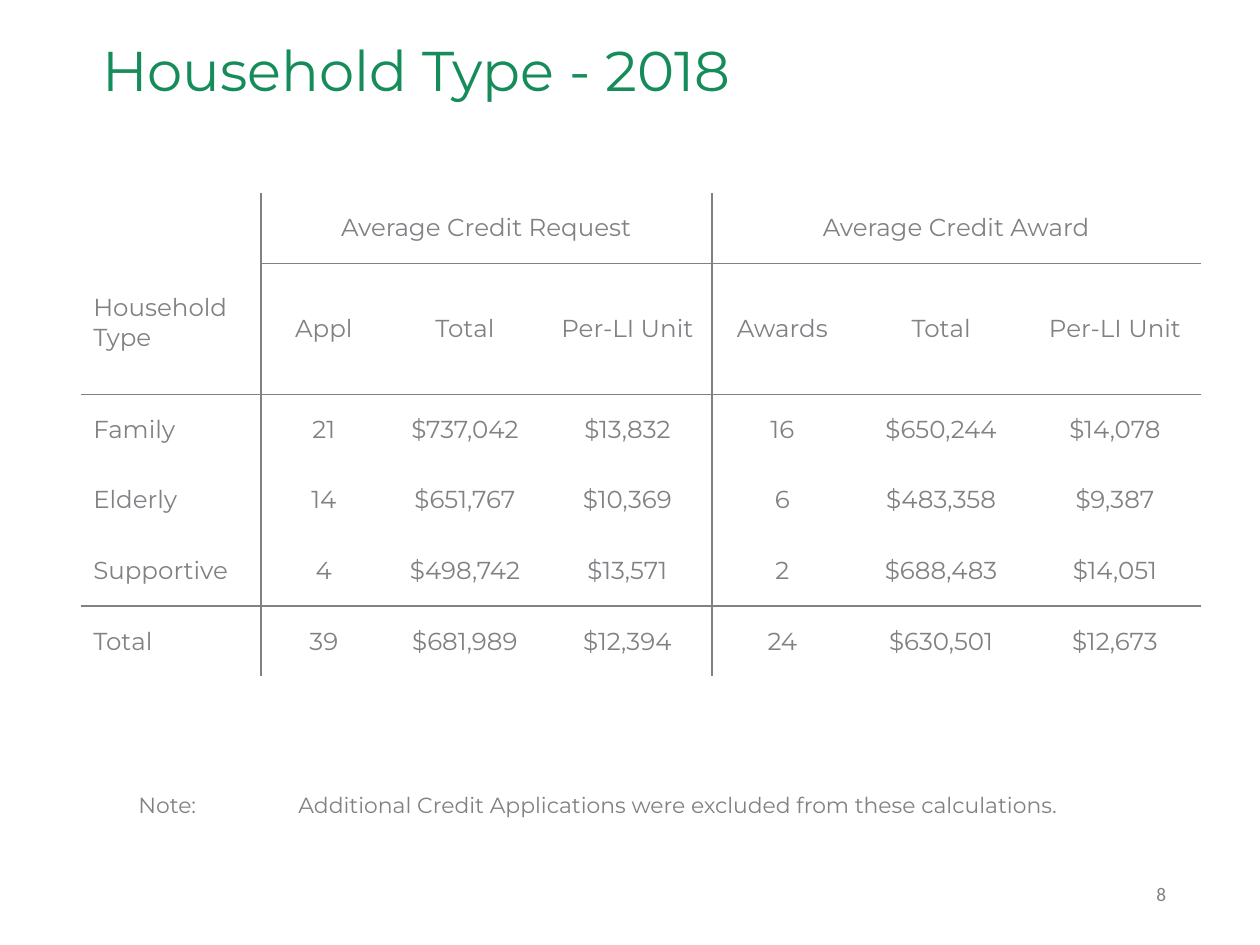
from lxml.etree import SubElement
from pptx import Presentation
from pptx.dml.color import RGBColor
from pptx.enum.text import MSO_ANCHOR, PP_ALIGN
from pptx.oxml import parse_xml
from pptx.oxml.ns import nsdecls, qn
from pptx.util import Inches, Pt

GREEN, GRAY = "158C59", "808184"


def set_font(paragraph, size, color, name="Montserrat"):
    paragraph.font.name = name
    paragraph.font.size = Pt(size)
    paragraph.font.color.rgb = RGBColor.from_string(color)


def set_borders(cell, visible_sides):
    """Draw the named sides (L, R, T, B) and clear the other ones."""
    properties = cell._tc.get_or_add_tcPr()
    for position, side in enumerate("LRTB"):
        if side in visible_sides:
            fill = f'<a:solidFill><a:srgbClr val="{GRAY}"/></a:solidFill>'
        else:
            fill = "<a:noFill/>"
        line = parse_xml(f'<a:ln{side} {nsdecls("a")} w="12700">{fill}</a:ln{side}>')
        properties.insert(position, line)


presentation = Presentation()
presentation.slide_width = Inches(10)
presentation.slide_height = Inches(7.5)
slide = presentation.slides.add_slide(presentation.slide_layouts[5])

# Title
title = slide.shapes.title
title.left, title.top = Inches(0.71), Inches(0.29)
title.width, title.height = Inches(8.39), Inches(1.11)
title.text_frame.text = "Household Type - 2018"
title.text_frame.vertical_anchor = MSO_ANCHOR.TOP
paragraph = title.text_frame.paragraphs[0]
paragraph.alignment = PP_ALIGN.LEFT
paragraph.line_spacing = 0.9
set_font(paragraph, 32, GREEN)

# Table
rows = [
    ["Household\nType", "Average Credit Request", "", "", "Average Credit Award", "", ""],
    ["", "Appl", "Total", "Per-LI Unit", "Awards", "Total", "Per-LI Unit"],
    ["Family", "21", "$737,042", "$13,832", "16", "$650,244", "$14,078"],
    ["Elderly", "14", "$651,767", "$10,369", "6", "$483,358", "$9,387"],
    ["Supportive", "4", "$498,742", "$13,571", "2", "$688,483", "$14,051"],
    ["Total", "39", "$681,989", "$12,394", "24", "$630,501", "$12,673"],
]
column_widths = [1.43, 1, 1.24, 1.34, 1.12, 1.4, 1.36]
row_heights = [0.56, 1.04, 0.56, 0.56, 0.56, 0.56]
ruled_columns = {0, 3}  # a line to the right of these
ruled_rows = {0, 1, 4}  # a line below these

table = slide.shapes.add_table(
    len(rows), len(column_widths), Inches(0.64), Inches(1.53),
    Inches(sum(column_widths)), Inches(sum(row_heights))).table
table.first_row = False
table.horz_banding = False
for column, width in zip(table.columns, column_widths):
    column.width = Inches(width)
for row, height in zip(table.rows, row_heights):
    row.height = Inches(height)

table.cell(0, 0).merge(table.cell(1, 0))
table.cell(0, 1).merge(table.cell(0, 3))
table.cell(0, 4).merge(table.cell(0, 6))

for row_index, values in enumerate(rows):
    for column_index, value in enumerate(values):
        cell = table.cell(row_index, column_index)
        cell.text = value
        cell.fill.background()
        cell.vertical_anchor = MSO_ANCHOR.MIDDLE
        for paragraph in cell.text_frame.paragraphs:
            paragraph.alignment = PP_ALIGN.CENTER if column_index else PP_ALIGN.LEFT
            set_font(paragraph, 14, GRAY)

        sides = ""
        if column_index in ruled_columns:
            sides += "R"
        if column_index - 1 in ruled_columns:
            sides += "L"
        # The merged header cell has its only row line at the bottom
        if row_index in ruled_rows:
            sides += "B"
        if row_index - 1 in ruled_rows and (row_index, column_index) != (1, 0):
            sides += "T"
        set_borders(cell, sides)

table.cell(0, 0).margin_top = Inches(0.51)

# Note
note = slide.shapes.add_textbox(Inches(1), Inches(6.23), Inches(8.32), Inches(0.31))
note.text_frame.word_wrap = True
paragraph = note.text_frame.paragraphs[0]
paragraph.text = "Note:\tAdditional Credit Applications were excluded from these calculations."
tab_list = SubElement(paragraph._p.get_or_add_pPr(), qn("a:tabLst"))
SubElement(tab_list, qn("a:tab"), pos=str(Inches(1.27)), algn="l")
set_font(paragraph, 12.5, GRAY)

# Slide number
number = slide.shapes.add_textbox(Inches(9.08), Inches(6.95), Inches(0.38), Inches(0.29))
number.text_frame.word_wrap = False
number.text_frame.text = "8"
set_font(number.text_frame.paragraphs[0], 11, GRAY, "Calibri")

presentation.save("out.pptx")
